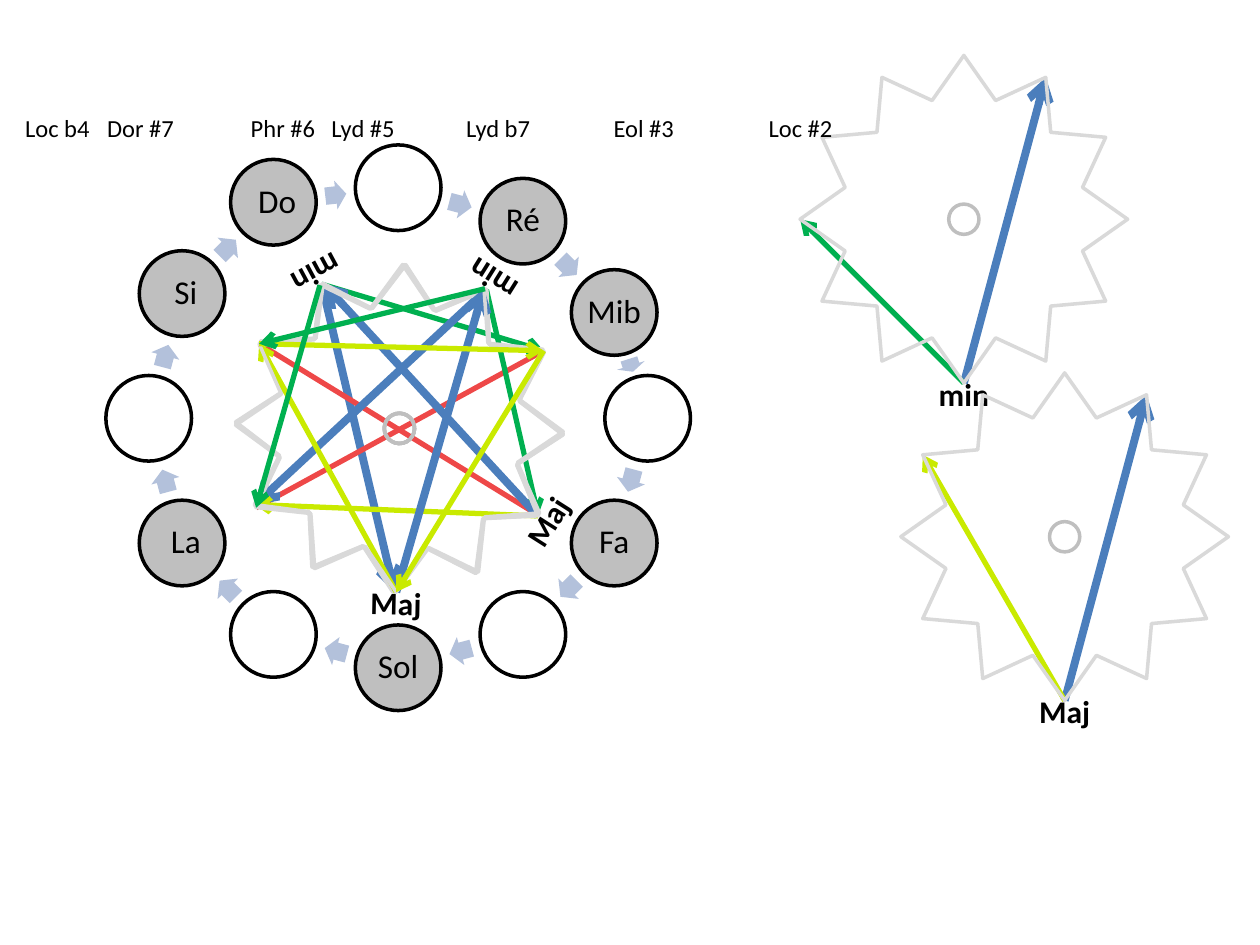
"""Circle of twelve notes with star-shaped major and minor triads."""
import math
from dataclasses import dataclass

from lxml import etree
from pptx import Presentation, util as u
from pptx.dml.color import RGBColor
from pptx.enum import shapes, text
from pptx.oxml.ns import qn


@dataclass(frozen=True)
class Theme:
    """Colours, type sizes, line widths and the grid of the slide."""
    font: str = "Calibri"
    ink: str = "000000"
    note: str = "BFBFBF"
    step: str = "B3C1DB"
    star: str = "D9D9D9"
    hub: str = "BFBFBF"
    fifth: str = "4B7EBC"
    minor: str = "00B050"
    major: str = "C9EA00"
    tritone: str = "EE4848"
    note_size: float = 19
    triad_size: float = 18
    mode_size: float = 14
    outline: float = 2
    thin: float = 3
    thick: float = 4.5
    columns: int = 100


THEME = Theme()
WIDTH, HEIGHT = u.Inches(10), u.Inches(7.5)
CELL = WIDTH / THEME.columns
KIND = shapes.MSO_SHAPE

NOTES = ["", "Ré", "Mib", "", "Fa", "", "Sol", "", " La", "", " Si", " Do"]
RING_CENTRE, RING_RADIUS, NOTE_SIZE = (31.6, 33.2), 19.8, 6.8
LOWERED_NOTES, LOWERING = 3, 1.5
STEP_SHARE, STEP_HEIGHT = 0.53, 2.3

STAR_RADIUS, LABEL_RADIUS, HUB_SIZE = 13, 13.85, 2.4
LABEL_SIZE = (7.1, 3)
TRIADS = {"min": (270, THEME.minor), "Maj": (300, THEME.major)}

MODES = {2: "Loc b4", 8.5: "Dor #7", 19.9: "Phr #6", 26.3: "Lyd #5",
         37: "Lyd b7", 48.7: "Eol #3", 61: "Loc #2"}


def cells(*values):
    """Turn grid cells into slide lengths."""
    return [round(value * CELL) for value in values]


def assign(target, values):
    """Set attributes of an object from a dict."""
    for name, value in values.items():
        setattr(target, name, value)


def around(centre, radius, angle):
    """Return the point at a clockwise angle from twelve o'clock."""
    turn = math.radians(angle)
    return (centre[0] + radius * math.sin(turn),
            centre[1] - radius * math.cos(turn))


def write(shape, words, size, bold=False, inset=0.0, align=text.PP_ALIGN.CENTER):
    """Put one paragraph of text into a shape."""
    frame = shape.text_frame
    assign(frame, {"word_wrap": False,
                   "vertical_anchor": text.MSO_ANCHOR.MIDDLE,
                   "margin_left": u.Inches(inset),
                   "margin_right": u.Inches(inset),
                   "margin_top": 0, "margin_bottom": 0})
    para = frame.paragraphs[0]
    para.alignment = align
    span = para.add_run()
    span.text = words
    assign(span.font, {"name": THEME.font, "size": u.Pt(size), "bold": bold})
    span.font.color.rgb = RGBColor.from_string(THEME.ink)
    return para


def add_figure(page, kind, centre, size, fill=None, line=None, rotation=0):
    """Draw a preset shape around its centre."""
    corner = [middle - side / 2 for middle, side in zip(centre, size)]
    figure = page.shapes.add_shape(kind, *cells(*corner, *size))
    figure.rotation = rotation
    figure.shadow.inherit = False
    if fill:
        figure.fill.solid()
        figure.fill.fore_color.rgb = RGBColor.from_string(fill)
    else:
        figure.fill.background()
    if line:
        figure.line.color.rgb = RGBColor.from_string(line)
        figure.line.width = u.Pt(THEME.outline)
    else:
        figure.line.fill.background()
    return figure


def add_line(page, start, end, colour, width=THEME.thin, arrow=True):
    """Draw a straight line, with an open arrowhead at its end if wanted."""
    line = page.shapes.add_connector(shapes.MSO_CONNECTOR.STRAIGHT,
                                     *cells(*start, *end))
    line.line.color.rgb = RGBColor.from_string(colour)
    line.line.width = u.Pt(width)
    if arrow:
        outline = line.line._get_or_add_ln()
        etree.SubElement(outline, qn("a:tailEnd"), type="arrow")
    etree.SubElement(line._element.spPr, qn("a:effectLst"))


def add_ring(page):
    """Draw the twelve notes and the arrow from each one to the next."""
    count = len(NOTES)
    places = []
    for index in range(count):
        x, y = around(RING_CENTRE, RING_RADIUS, index * 360 / count)
        places.append((x, y + LOWERING * (index < LOWERED_NOTES)))
    for index, (name, place) in enumerate(zip(NOTES, places)):
        note = add_figure(page, KIND.OVAL, place, (NOTE_SIZE, NOTE_SIZE),
                          THEME.note if name else None, THEME.ink)
        if name:
            write(note, name, THEME.note_size, inset=0.03).line_spacing = 0.9
        follower = places[(index + 1) % count]
        across, down = follower[0] - place[0], follower[1] - place[1]
        length = STEP_SHARE * (math.hypot(across, down) - NOTE_SIZE)
        middle = (place[0] + across / 2, place[1] + down / 2)
        step = add_figure(page, KIND.RIGHT_ARROW, middle, (length, STEP_HEIGHT),
                          THEME.step, rotation=math.degrees(math.atan2(down, across)))
        step.adjustments[0] = 0.6


def add_triad(page, name, centre, turn=0):
    """Draw a turned star with its fifth, its third, its name and its hub."""
    third, colour = TRIADS[name]
    root = around(centre, STAR_RADIUS, 180 + turn)
    add_line(page, root, around(centre, STAR_RADIUS, 30 + turn),
             THEME.fifth, THEME.thick)
    add_line(page, root, around(centre, STAR_RADIUS, third + turn), colour)
    add_figure(page, KIND.STAR_12_POINT, centre, (2 * STAR_RADIUS,) * 2,
               line=THEME.star, rotation=turn)
    x, y = around(centre, LABEL_RADIUS, 180 + turn)
    width, height = LABEL_SIZE
    box = page.shapes.add_textbox(*cells(x - width / 2, y - height / 2, width, height))
    box.rotation = turn
    write(box, name, THEME.triad_size, bold=True, inset=0.1)
    add_figure(page, KIND.OVAL, centre, (HUB_SIZE, HUB_SIZE),
               line=THEME.hub, rotation=turn)


def add_modes(page):
    """Write the mode names on one line, each at its own tab stop."""
    left = min(MODES)
    box = page.shapes.add_textbox(*cells(left, 8.4, 65, 3.4))
    para = box.text_frame.paragraphs[0]
    stops = etree.SubElement(para._p.get_or_add_pPr(), qn("a:tabLst"))
    for place in list(MODES)[1:]:
        etree.SubElement(stops, qn("a:tab"), pos=str(cells(place - left)[0]), algn="l")
    write(box, "\t".join(MODES.values()), THEME.mode_size, align=text.PP_ALIGN.LEFT)


def main():
    """Build the slide and save it."""
    deck = Presentation()
    assign(deck, {"slide_width": WIDTH, "slide_height": HEIGHT})
    page = deck.slides.add_slide(deck.slide_layouts[6])
    centre = (31.7, 34)
    do, re, mib, sol, la, si, fa = (
        around(centre, STAR_RADIUS, angle)
        for angle in (331, 31.5, 61.7, 181.1, 241, 301.1, 122))

    add_ring(page)
    add_triad(page, "min", (76.5, 17.4))
    add_triad(page, "Maj", (84.5, 42.6))
    add_triad(page, "min", centre, 151.7)
    for start, end in ((fa, si), (mib, la)):
        add_line(page, start, end, THEME.tritone, arrow=False)
    for name, turn in (("min", 212.1), ("Maj", 302.3), ("Maj", 1.1)):
        add_triad(page, name, centre, turn)
    for start, end, colour in ((si, mib, THEME.major), (mib, sol, THEME.major),
                               (re, si, THEME.minor), (do, la, THEME.minor)):
        add_line(page, start, end, colour)
    add_modes(page)
    deck.save("out.pptx")


if __name__ == "__main__":
    main()
